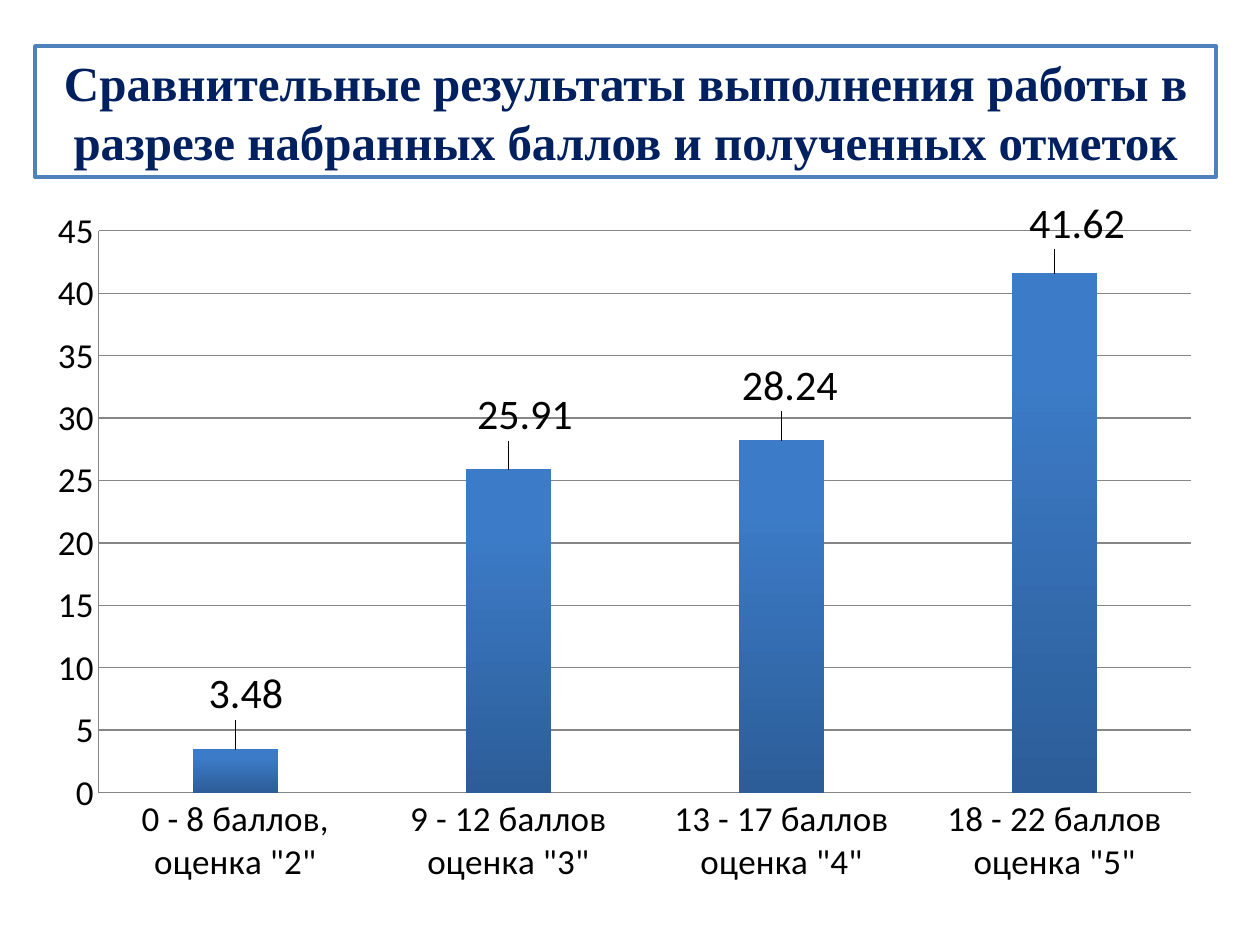
from dataclasses import dataclass

from lxml.etree import SubElement
from pptx import Presentation
from pptx.chart.data import CategoryChartData
from pptx.dml.color import RGBColor
from pptx.enum.chart import XL_CHART_TYPE, XL_LABEL_POSITION, XL_TICK_MARK
from pptx.enum.shapes import MSO_SHAPE
from pptx.enum.text import MSO_ANCHOR, MSO_AUTO_SIZE, PP_ALIGN
from pptx.oxml.ns import qn
from pptx.util import Emu, Pt

EMU_PER_PX = 914400 // 126


@dataclass(frozen=True)
class Theme:
    background = RGBColor(0xFF, 0xFF, 0xFF)
    border = RGBColor(0x4F, 0x81, 0xBD)
    title = RGBColor(0x00, 0x20, 0x60)
    text = RGBColor(0x00, 0x00, 0x00)
    grid = RGBColor(0x86, 0x86, 0x86)
    bar_bottom = RGBColor(0x2C, 0x5D, 0x98)
    bar_top = RGBColor(0x3C, 0x7B, 0xC7)
    title_font = "Times New Roman"
    chart_font = "Calibri"
    title_size = Pt(28)
    chart_size = Pt(18)
    axis_size = Pt(20)
    label_size = Pt(24)


THEME = Theme()
TITLE = "Сравнительные результаты выполнения работы в разрезе набранных баллов и полученных отметок"
TITLE_BOX = (35, 46, 1181, 131)
CHART_BOX = (35, 195, 1181, 704)
PLOT_BOX = (64, 36, 1093, 562)  # relative to the chart
# category, value, shift of its label in px
RESULTS = [
    ('0 - 8 баллов, оценка "2"', 3.48, (11, -24)),
    ('9 - 12 баллов оценка "3"', 25.91, (16, -23)),
    ('13 - 17 баллов оценка "4"', 28.24, (8, -23)),
    ('18 - 22 баллов оценка "5"', 41.62, (22, -18)),
]


def px(*lengths):
    return [Emu(length * EMU_PER_PX) for length in lengths]


def style_font(font, name, size, color):
    font.name = name
    font.size = size
    font.color.rgb = color


def add_title(slide):
    shape = slide.shapes.add_shape(MSO_SHAPE.RECTANGLE, *px(*TITLE_BOX))
    shape.shadow.inherit = False
    shape.fill.solid()
    shape.fill.fore_color.rgb = THEME.background
    shape.line.color.rgb = THEME.border
    shape.line.width = Pt(2)
    frame = shape.text_frame
    frame.word_wrap = True
    frame.auto_size = MSO_AUTO_SIZE.SHAPE_TO_FIT_TEXT
    frame.vertical_anchor = MSO_ANCHOR.MIDDLE
    paragraph = frame.paragraphs[0]
    paragraph.text = TITLE
    paragraph.alignment = PP_ALIGN.CENTER
    style_font(paragraph.font, THEME.title_font, THEME.title_size, THEME.title)
    paragraph.font.bold = True


def fill_layout(layout, **settings):
    manual = SubElement(layout, qn("c:manualLayout"))
    for name, value in settings.items():
        SubElement(manual, qn(f"c:{name}")).set("val", str(value))


def place_plot(chart):
    """Fix the inner plot area at PLOT_BOX."""
    plot_area = chart.plots[0]._element.getparent()
    for layout in plot_area.findall(qn("c:layout")):
        plot_area.remove(layout)
    layout = SubElement(plot_area, qn("c:layout"))
    plot_area.insert(0, layout)
    width, height = CHART_BOX[2:]
    x, y, w, h = (round(length / whole, 3)
                  for length, whole in zip(PLOT_BOX, (width, height) * 2))
    fill_layout(layout, layoutTarget="inner", xMode="edge", yMode="edge", x=x, y=y, w=w, h=h)


def style_axis(axis):
    axis.major_tick_mark = axis.minor_tick_mark = XL_TICK_MARK.NONE
    axis.format.line.color.rgb = THEME.grid
    style_font(axis.tick_labels.font, THEME.chart_font, THEME.axis_size, THEME.text)


def add_label(series, index, shift):
    """Show the value above its bar, moved by shift."""
    label = series.points[index].data_label
    style_font(label.font, THEME.chart_font, THEME.label_size, THEME.text)
    label.position = XL_LABEL_POSITION.OUTSIDE_END
    element = series._element.find(f"{qn('c:dLbls')}/{qn('c:dLbl')}[{index + 1}]")
    layout = SubElement(element, qn("c:layout"))
    element.insert(1, layout)
    x, y = (round(length / whole, 3) for length, whole in zip(shift, CHART_BOX[2:]))
    fill_layout(layout, x=x, y=y)


def style_bars(series):
    series.invert_if_negative = False
    fill = series.format.fill
    fill.gradient()
    fill.gradient_angle = 90
    stops = zip(fill.gradient_stops, (THEME.bar_bottom, THEME.bar_top), (0, 0.8))
    for stop, color, position in stops:
        stop.color.rgb = color
        stop.position = position


def add_results_chart(slide):
    data = CategoryChartData()
    data.categories = [category for category, _, _ in RESULTS]
    data.add_series("Series 1", [value for _, value, _ in RESULTS])
    chart = slide.shapes.add_chart(
        XL_CHART_TYPE.COLUMN_CLUSTERED, *px(*CHART_BOX), data).chart
    chart.has_legend = False
    chart.has_title = False
    style_font(chart.font, THEME.chart_font, THEME.chart_size, THEME.text)
    place_plot(chart)

    style_axis(chart.category_axis)
    value_axis = chart.value_axis
    style_axis(value_axis)
    value_axis.minimum_scale, value_axis.maximum_scale, value_axis.major_unit = 0, 45, 5
    value_axis.has_major_gridlines = True
    value_axis.major_gridlines.format.line.color.rgb = THEME.grid

    plot = chart.plots[0]
    plot.vary_by_categories = False
    plot.gap_width = 219
    plot.overlap = -27
    series = plot.series[0]
    style_bars(series)
    labels = series.data_labels
    labels.show_value = True
    labels.position = XL_LABEL_POSITION.OUTSIDE_END
    style_font(labels.font, THEME.chart_font, THEME.label_size, THEME.text)
    for index, (_, _, shift) in enumerate(RESULTS):
        add_label(series, index, shift)


def main():
    presentation = Presentation()
    presentation.slide_width, presentation.slide_height = px(1260, 945)
    slide = presentation.slides.add_slide(presentation.slide_layouts[6])
    add_title(slide)
    add_results_chart(slide)
    presentation.save("out.pptx")


if __name__ == "__main__":
    main()
